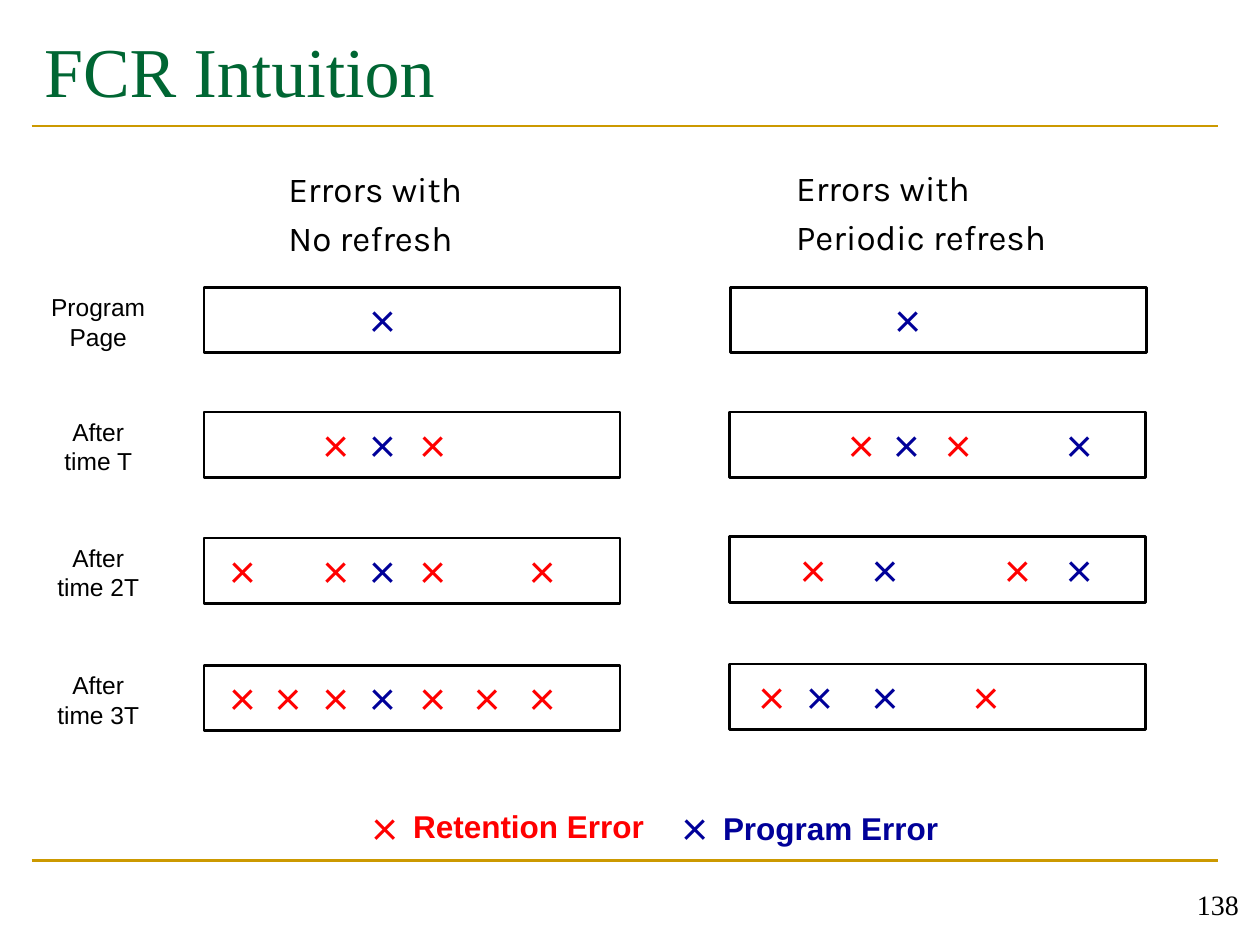
from lxml.etree import SubElement
from pptx import Presentation
from pptx.dml.color import RGBColor
from pptx.enum.shapes import MSO_CONNECTOR, MSO_SHAPE
from pptx.enum.text import MSO_ANCHOR, MSO_AUTO_SIZE, PP_ALIGN
from pptx.oxml.ns import qn
from pptx.util import Inches, Pt

COLORS = {
    "title": "006633",
    "rule": "CC9900",
    "ink": "000000",
    "retention": "FF0000",
    "program": "000099",
}
ERROR_KINDS = ("program", "retention")
STAGES = ["Program\vPage", "After\vtime T", "After\vtime 2T", "After\vtime 3T"]
LABEL_TOPS = [2.27, 3.26, 4.26, 5.27]
NO_REFRESH = [
    (1.62, 2.28, [2.84], []),
    (1.62, 3.27, [2.84], [2.47, 3.24]),
    (1.62, 4.27, [2.84], [1.73, 2.47, 3.24, 4.11]),
    (1.62, 5.28, [2.84], [1.73, 2.09, 2.47, 3.24, 3.67, 4.11]),
]
PERIODIC_REFRESH = [
    (5.8, 2.28, [7.01], []),
    (5.79, 3.27, [7, 8.37], [6.64, 7.41]),
    (5.79, 4.26, [6.83, 8.37], [6.26, 7.88]),
    (5.79, 5.27, [6.31, 6.83], [5.93, 7.63]),
]


def rgb(color):
    return RGBColor.from_string(COLORS[color])


class SlideBuilder:
    def __init__(self, slide):
        self.slide = slide

    def style(self, frame, font, size, color="ink", bold=False,
              align=PP_ALIGN.LEFT, before=0):
        for paragraph in frame.paragraphs:
            paragraph.alignment = align
            paragraph.space_before = Pt(before)
            for run in paragraph.runs:
                run.font.name = font
                run.font.size = Pt(size)
                run.font.bold = bold
                run.font.color.rgb = rgb(color)

    def title(self, text, left, top, width, height):
        heading = self.slide.shapes.title
        heading.left, heading.top = Inches(left), Inches(top)
        heading.width, heading.height = Inches(width), Inches(height)
        heading.text_frame.text = text
        heading.text_frame.vertical_anchor = MSO_ANCHOR.TOP
        self.style(heading.text_frame, "Times New Roman", 40, "title")

    def text(self, text, left, top, width, height, font, size,
             anchor=MSO_ANCHOR.TOP, wrap=True, grow=False, **style):
        box = self.slide.shapes.add_textbox(
            Inches(left), Inches(top), Inches(width), Inches(height))
        frame = box.text_frame
        frame.text = text
        frame.word_wrap = wrap
        frame.vertical_anchor = anchor
        if grow:
            frame.auto_size = MSO_AUTO_SIZE.SHAPE_TO_FIT_TEXT
        self.style(frame, font, size, **style)

    def rule(self, top):
        line = self.slide.shapes.add_connector(
            MSO_CONNECTOR.STRAIGHT,
            Inches(0.25), Inches(top), Inches(9.67), Inches(top))
        line.line.color.rgb = rgb("rule")
        line.line.width = Pt(1.5)
        SubElement(line._element.spPr, qn("a:effectLst"))

    def rectangle(self, left, top, width, height):
        box = self.slide.shapes.add_shape(
            MSO_SHAPE.RECTANGLE,
            Inches(left), Inches(top), Inches(width), Inches(height))
        box.shadow.inherit = False
        box.fill.background()
        return box

    def stage(self, text, top):
        label = self.rectangle(0.28, top, 1, 0.52)
        label.line.fill.background()
        label.text_frame.text = text
        label.text_frame.vertical_anchor = MSO_ANCHOR.TOP
        self.style(label.text_frame, "Arial", 14, align=PP_ALIGN.CENTER)

    def page(self, left, top):
        page = self.rectangle(left, top, 3.3, 0.52)
        page.line.color.rgb = rgb("ink")
        page.line.width = Pt(1.5)

    def error(self, kind, left, top):
        self.text("×", left, top, 0.45, 0.57, "Calibri", 28,
                  anchor=MSO_ANCHOR.MIDDLE, grow=True, color=kind)

    def legend(self, kind, text, left, top, width):
        self.error(kind, left, 6.27)
        self.text(text, left + 0.32, top, width, 0.4, "Arial", 18,
                  wrap=False, grow=True, color=kind, bold=True)


def main():
    deck = Presentation()
    deck.slide_width, deck.slide_height = Inches(10), Inches(7.5)
    builder = SlideBuilder(deck.slides.add_slide(deck.slide_layouts[5]))

    for top in (6.83, 1):
        builder.rule(top)
    builder.title("FCR Intuition", 0.25, 0.17, 9.42, 1.17)
    builder.text("138", 7.6, 6.86, 2.33, 0.5, "Times New Roman", 16,
                 anchor=MSO_ANCHOR.BOTTOM, align=PP_ALIGN.RIGHT)

    builder.text("Errors with\nNo refresh", 2.19, 1.28, 2.46, 0.53,
                 "Karla", 20, before=4)
    builder.text("Errors with\nPeriodic refresh", 6.22, 1.27, 4.05, 0.53,
                 "Karla", 20, before=4)

    for stage, top in zip(STAGES, LABEL_TOPS):
        builder.stage(stage, top)
    for left, top, *errors in NO_REFRESH + PERIODIC_REFRESH:
        builder.page(left, top)
        for kind, positions in zip(ERROR_KINDS, errors):
            for position in positions:
                builder.error(kind, position, top - 0.04)

    builder.legend("retention", "Retention Error", 2.86, 6.36, 2.05)
    builder.legend("program", "Program Error", 5.32, 6.37, 1.93)

    deck.save("out.pptx")


if __name__ == "__main__":
    main()
